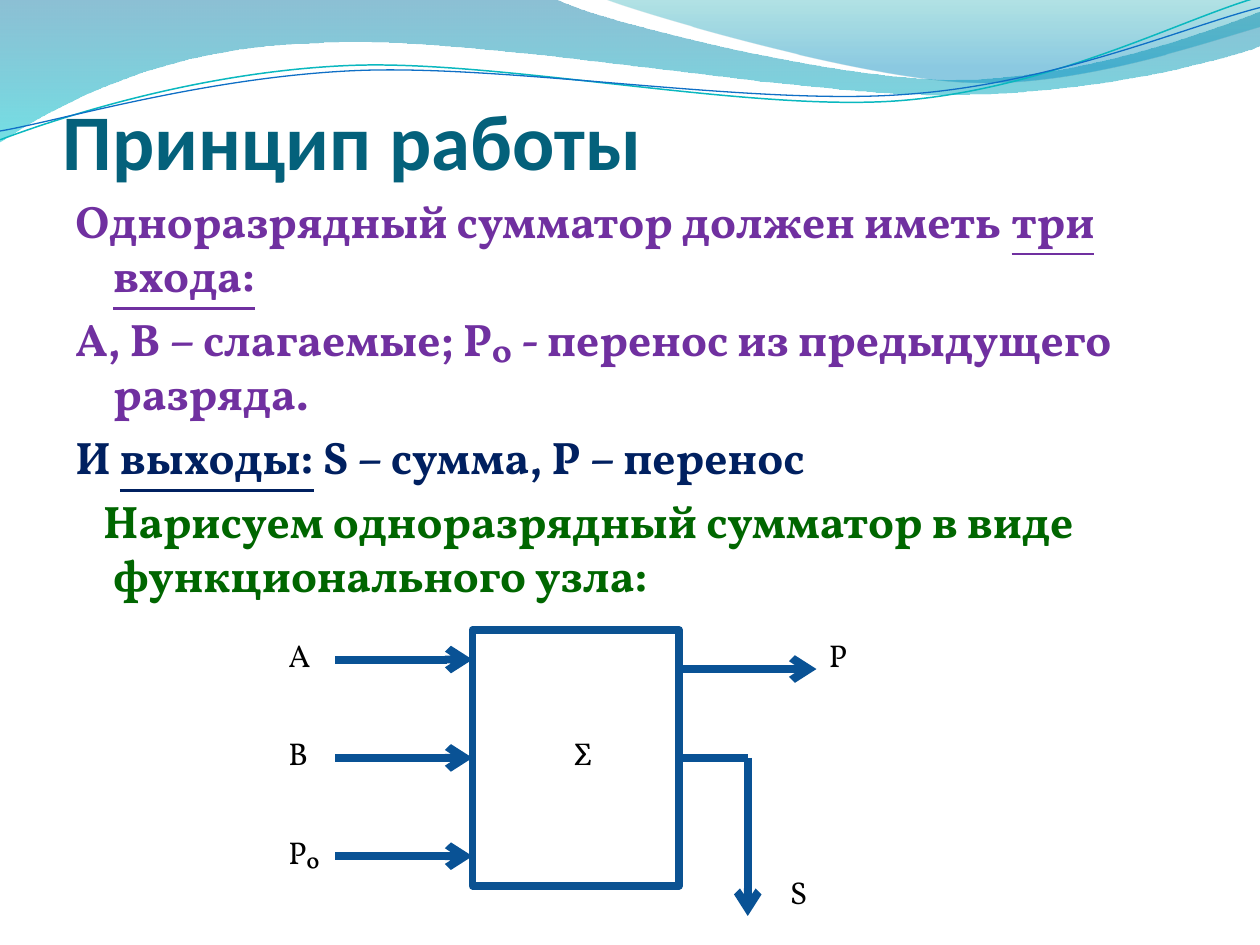
from math import cos, radians, sin

from lxml import etree
from pptx import Presentation
from pptx.dml.color import RGBColor as Rgb
from pptx.enum.shapes import MSO_CONNECTOR as Conn, MSO_SHAPE as Kind
from pptx.enum.text import MSO_ANCHOR as Anchor
from pptx.oxml import parse_xml
from pptx.oxml.ns import nsdecls, qn
from pptx.util import Inches, Pt

COLORS = {
    "title": "04617B", "input": "7030A0", "output": "002060", "task": "006600",
    "frame": "0B5292", "arrow": "095295", "label": "000000",
    "teal": "0AB8BF", "blue": "0F6FC6",
}
TILT = -2.7
BANDS = [
    ([(0, 0), (4.4, -0.01),
      (4.76, 0.17, 6.64, 0.63, 7.58, 0.63), (8.53, 0.63, 9.58, 0.26, 10, 0.09),
      (10.01, 0.36),
      (9.83, 0.44, 8.7, 0.76, 7.46, 0.75), (6.22, 0.75, 3.82, 0.28, 2.57, 0.34),
      (1.29, 0.36, 0.46, 0.83, -0.01, 1.13)],
     [(0, "0074A1", 45), (100, "00C6CF", 55)]),
    ([(4.79, -0.01),
      (5.09, 0.11, 6.82, 0.62, 7.69, 0.65), (8.56, 0.69, 9.61, 0.32, 10, 0.21),
      (10, 0)],
     [(0, "00A1A9", 30), (80, "008BBF", 45)]),
]
WAVES = [
    ([(0, 1.11), (0.48, 0.93, 1.58, 0.57, 2.77, 0.52),
      (3.95, 0.47, 5.93, 0.89, 7.13, 0.8), (8.33, 0.71, 9.38, 0.15, 9.98, -0.02)],
     "teal", 0.85),
    ([(0, 1.04), (0.47, 0.96, 1.64, 0.61, 2.83, 0.56),
      (4.03, 0.51, 5.97, 0.84, 7.17, 0.75), (8.36, 0.67, 9.41, 0.21, 10, 0.06)],
     "blue", 0.75),
]
BODY = [
    (-0.3, [("Одноразрядный сумматор должен иметь ", "input", False),
            ("три входа:", "input", True)]),
    (-0.3, [("А, В – слагаемые; Р₀ - перенос из предыдущего разряда.", "input", False)]),
    (-0.3, [("И ", "output", False), ("выходы:", "output", True),
            (" S – сумма, Р – перенос", "output", False)]),
    (-0.08, [("Нарисуем одноразрядный сумматор в виде функционального узла:",
              "task", False)]),
]


def tint(name):
    return Rgb.from_string(COLORS[name])


def style(run, size, color, face="Vollkorn", bold=False):
    font = run.font
    font.size, font.name, font.bold = Pt(size), face, bold
    font.color.rgb = tint(color)


def pairs(step):
    return list(zip(step[::2], step[1::2]))


def turn(step, angle, mid=(4.99, 0.58)):
    c, s = cos(radians(angle)), sin(radians(angle))
    spots = [(x - mid[0], y - mid[1]) for x, y in pairs(step)]
    return tuple(v for x, y in spots
                 for v in (mid[0] + x * c - y * s, mid[1] + x * s + y * c))


def outline(slide, box, steps, close):
    spots = [[(Inches(box[0] + x), Inches(box[1] + y)) for x, y in pairs(step)]
             for step in steps]
    pen = slide.shapes.build_freeform(*spots[0][0])
    pen.add_line_segments([spot[-1] for spot in spots[1:]], close=close)
    shape = pen.convert_to_shape()
    lines = list(shape._element.iter(qn("a:lnTo")))
    for line, curve in zip(lines, spots[1:]):
        if len(curve) == 3:
            bend = etree.Element(qn("a:cubicBezTo"))
            for x, y in curve:
                etree.SubElement(bend, qn("a:pt"),
                                 x=str(x - shape.left), y=str(y - shape.top))
            line.getparent().replace(line, bend)
    shape.shadow.inherit = False
    shape.fill.background()
    shape.line.fill.background()
    return shape


def shade(shape, stops):
    marks = "".join(
        f'<a:gs pos="{pos * 1000}"><a:srgbClr val="{color}">'
        f'<a:alpha val="{alpha * 1000}"/></a:srgbClr></a:gs>'
        for pos, color, alpha in stops)
    fill = parse_xml(f'<a:gradFill {nsdecls("a")} rotWithShape="1"><a:gsLst>{marks}'
                     '</a:gsLst><a:lin ang="5400000" scaled="0"/></a:gradFill>')
    props = shape._element.spPr
    props.replace(props.find(qn("a:noFill")), fill)


def add_header(slide, box):
    for steps, stops in BANDS:
        shade(outline(slide, box, steps, True), stops)
    for steps, color, width in WAVES:
        wave = outline(slide, box, [turn(step, -TILT) for step in steps], False)
        wave.rotation = TILT
        wave.line.color.rgb = tint(color)
        wave.line.width = Pt(width)


def add_title(slide, box):
    frame = slide.shapes.add_textbox(*map(Inches, box)).text_frame
    frame.word_wrap = True
    frame.vertical_anchor = Anchor.BOTTOM
    frame.margin_left = frame.margin_right = frame.margin_bottom = 0
    frame.text = "Принцип работы"
    style(frame.paragraphs[0].runs[0], 45, "title", "Calibri", True)


def add_body(slide, box):
    frame = slide.shapes.add_textbox(*map(Inches, box)).text_frame
    frame.word_wrap = True
    for i, (indent, parts) in enumerate(BODY):
        para = frame.add_paragraph() if i else frame.paragraphs[0]
        props = para._p.get_or_add_pPr()
        props.set("marL", str(Inches(0.3)))
        props.set("indent", str(Inches(indent)))
        gap = etree.SubElement(props, qn("a:spcBef"))
        etree.SubElement(gap, qn("a:spcPct"), val="20000")
        for text, color, under in parts:
            run = para.add_run()
            run.text = text
            style(run, 26, color, bold=True)
            run.font.underline = under


def add_wire(slide, start, end, head=True):
    wire = slide.shapes.add_connector(Conn.STRAIGHT, *map(Inches, start + end))
    wire.line.color.rgb = tint("arrow")
    wire.line.width = Pt(4.5)
    if head:
        etree.SubElement(wire.line._get_or_add_ln(), qn("a:tailEnd"), type="arrow")
    etree.SubElement(wire._element.spPr, qn("a:effectLst"))
    return wire


def add_label(slide, text, x, y, width=0.47):
    frame = slide.shapes.add_textbox(*map(Inches, (x, y, width, 0.4))).text_frame
    frame.word_wrap = True
    frame.text = text
    style(frame.paragraphs[0].runs[0], 18, "label")


def add_adder(slide, box):
    x, y, w, h = box
    left, right, mid, reach = x + 1.56, x + 3.2, y + 1.015, 1.09
    node = slide.shapes.add_shape(
        Kind.RECTANGLE, *map(Inches, (left, y, right - left, 2.03)))
    node.shadow.inherit = False
    node.fill.background()
    node.line.color.rgb = tint("frame")
    node.line.width = Pt(4.5)

    for i, text in enumerate(("A", "B", "P₀")):
        level = mid + (i - 1) * 0.78
        wire = add_wire(slide, (left - reach, level), (left, level))
        if i == 1:
            wire.end_connect(node, 1)
        add_label(slide, text, x, y + i * 0.78)

    add_wire(slide, (right, y + 0.31), (right + reach, y + 0.31))
    bend = right + reach / 2
    add_wire(slide, (right, mid), (bend, mid), False).begin_connect(node, 3)
    add_wire(slide, (bend, mid), (bend, y + h))
    add_label(slide, "Σ", x + 2.26, y + 0.78, 0.39)
    add_label(slide, "Р", right + reach, y, 0.39)
    add_label(slide, "S", x + 3.98, y + 1.88, 0.33)


def main():
    deck = Presentation()
    deck.slide_width, deck.slide_height = Inches(10), Inches(7.5)
    slide = deck.slides.add_slide(deck.slide_layouts[6])
    add_header(slide, (0, 0, 10, 1.13))
    add_title(slide, (0.5, 0.77, 9, 0.71))
    add_body(slide, (0.5, 1.48, 9, 5.78))
    add_adder(slide, (2.19, 5, 4.68, 2.27))
    deck.save("out.pptx")


if __name__ == "__main__":
    main()
